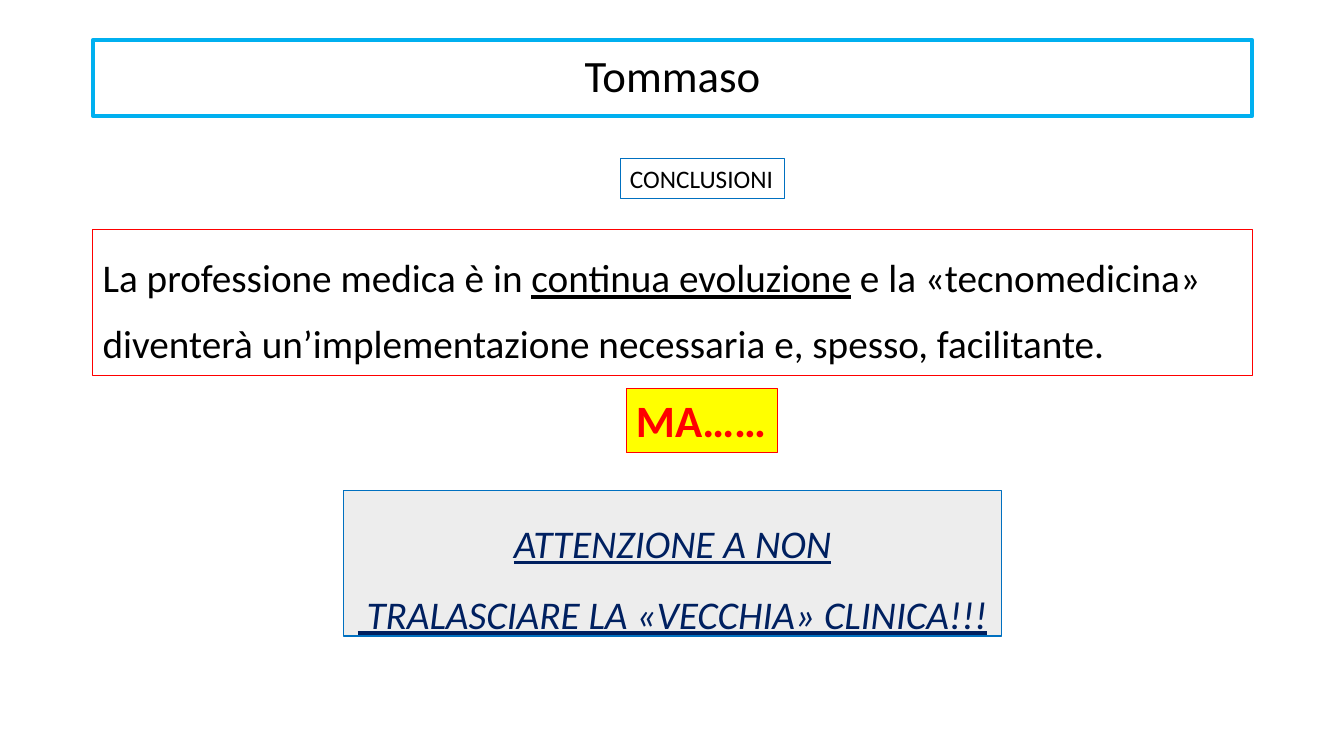
"""Build the conclusions slide with a framed title and four boxed statements."""
import pptx
import pptx.util
import pptx.dml.color
import pptx.enum.text

In, Pt = pptx.util.Inches, pptx.util.Pt
ALIGN = pptx.enum.text.PP_ALIGN
ANCHOR = pptx.enum.text.MSO_ANCHOR
AUTO = pptx.enum.text.MSO_AUTO_SIZE


def color(value):
    return pptx.dml.color.RGBColor.from_string(value)


def write(p, text, size=28, ink="000000", bold=False, italic=False, underline=False):
    r = p.add_run()
    r.text = text
    f = r.font
    f.name, f.size, f.bold = "Calibri", Pt(size), bold
    f.italic, f.underline = italic, underline
    f.color.rgb = color(ink)


prs = pptx.Presentation()
prs.slide_width, prs.slide_height = In(13.33), In(7.5)
s = prs.slides.add_slide(prs.slide_layouts[5])

LEFT, WIDTH = 0.92, 11.5
warning = dict(ink="002060", italic=True, underline=True)
boxes = [
    dict(at=(LEFT, 0.4, WIDTH, 0.75), line="00B0F0", weight=3, title=True, wrap=True,
         align=ALIGN.CENTER, spacing=0.9, paragraphs=[[("Tommaso", dict(size=32))]]),
    dict(at=(LEFT, 2.28, WIDTH, 1.45), line="FF0000", wrap=True, spacing=1.4, before=10,
         paragraphs=[[
             ("La professione medica è in ", {}),
             ("continua evoluzione", dict(underline=True)),
             (" e la «tecnomedicina» diventerà un’implementazione necessaria e, "
              "spesso, facilitante.", {})]]),
    dict(at=(6.15, 1.57, 1.63, 0.4), line="0070C0",
         paragraphs=[[("CONCLUSIONI", dict(size=18))]]),
    dict(at=(6.21, 3.85, 1.5, 0.64), line="FF0000", fill="FFFF00",
         paragraphs=[[("MA……", dict(size=32, ink="FF0000", bold=True))]]),
    dict(at=(3.41, 4.87, 6.52, 1.44), line="0070C0", fill="EDEDED",
         align=ALIGN.CENTER, spacing=1.5,
         paragraphs=[[("ATTENZIONE A NON", warning)],
                     [(" TRALASCIARE LA «VECCHIA» CLINICA!!!", warning)]]),
]

for box in boxes:
    at = [In(v) for v in box["at"]]
    title, wrap = box.get("title", False), box.get("wrap", False)
    if title:
        sp = s.shapes.title
        sp.left, sp.top, sp.width, sp.height = at
    else:
        sp = s.shapes.add_textbox(*at)
    sp.line.color.rgb = color(box["line"])
    sp.line.width = Pt(box.get("weight", 0.75))
    if "fill" in box:
        sp.fill.solid()
        sp.fill.fore_color.rgb = color(box["fill"])
    tf = sp.text_frame
    tf.word_wrap = wrap
    tf.auto_size = AUTO.NONE if wrap else AUTO.SHAPE_TO_FIT_TEXT
    tf.vertical_anchor = ANCHOR.MIDDLE if title else ANCHOR.TOP
    for i, runs in enumerate(box["paragraphs"]):
        p = tf.add_paragraph() if i else tf.paragraphs[0]
        p.alignment = box.get("align", ALIGN.LEFT)
        p.line_spacing = box.get("spacing", 1.0)
        p.space_before = Pt(box.get("before", 0))
        for text, style in runs:
            write(p, text, **style)

prs.save("out.pptx")
